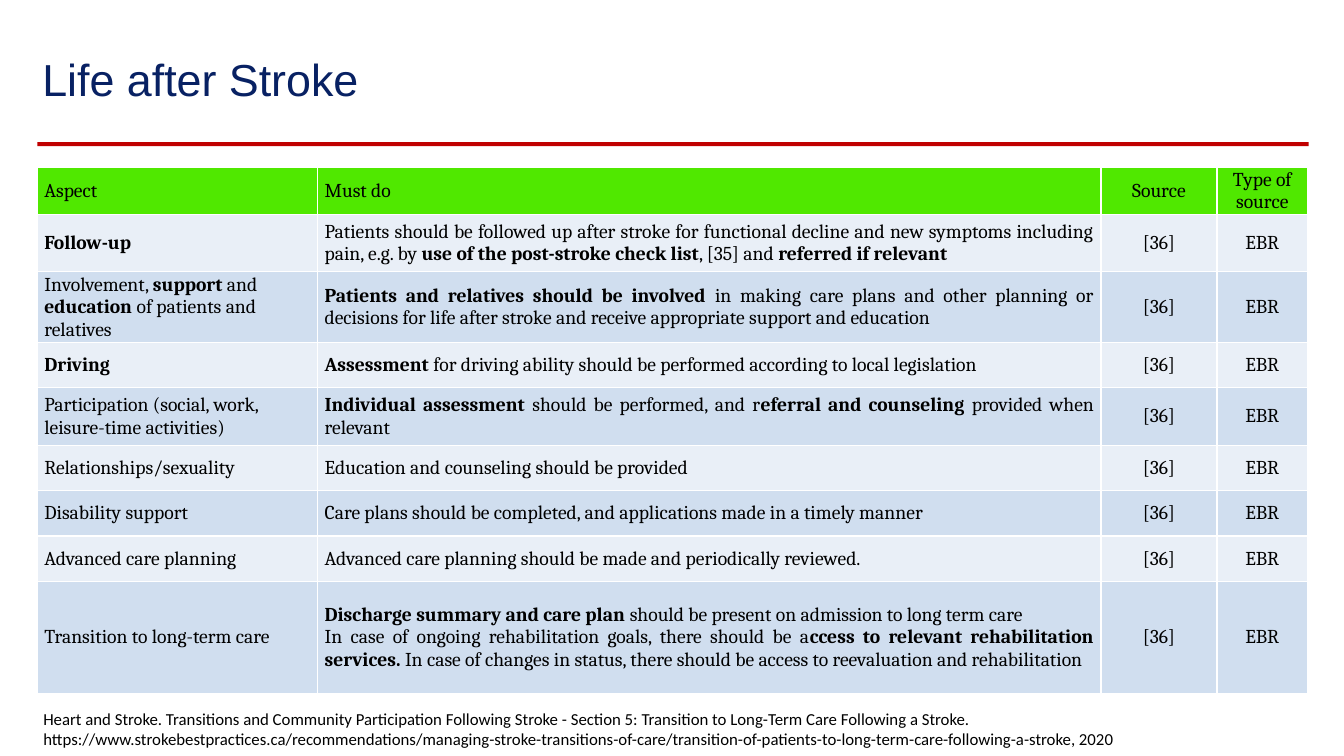
from dataclasses import dataclass

import lxml.etree
import pptx
import pptx.dml.color
import pptx.enum.shapes
import pptx.enum.text
import pptx.oxml.ns
import pptx.util

Inches = pptx.util.Inches
Align = pptx.enum.text.PP_ALIGN
Anchor = pptx.enum.text.MSO_ANCHOR

HEADER_FILL = "50E800"
BAND_FILLS = ("E9EFF7", "D0DEEF")
BLACK = "000000"
LEFT = 0.37


@dataclass
class TextBlock:
    text: str
    left: float
    top: float
    width: float
    height: float
    font: str
    size: int
    color: str
    anchor: Anchor = Anchor.TOP
    line_spacing: float = 1.0


@dataclass
class Column:
    width: float
    alignment: Align


@dataclass
class Aspect:
    """A table row; ** switches bold on and off."""
    name: str
    must_do: str
    height: float = 0.45
    source: str = "[36]"
    source_type: str = "EBR"


TITLE = TextBlock("Life after Stroke", LEFT, 0.4, 10.74, 0.82, "Arial", 32, "082163",
                  Anchor.MIDDLE, 0.9)
REFERENCE = TextBlock(
    "Heart and Stroke. Transitions and Community Participation Following Stroke - "
    "Section 5: Transition to Long-Term Care Following a Stroke. "
    "https://www.strokebestpractices.ca/recommendations/managing-stroke-transitions-of-care/"
    "transition-of-patients-to-long-term-care-following-a-stroke, 2020",
    0.38, 6.98, 12.6, 0.48, "Calibri", 12, BLACK)

COLUMNS = [
    Column(2.78, Align.LEFT),
    Column(7.77, Align.JUSTIFY),
    Column(1.15, Align.CENTER),
    Column(0.9, Align.CENTER),
]

ROWS = [
    Aspect("Aspect", "Must do", source="Source", source_type="Type of source"),
    Aspect("**Follow-up**",
           "Patients should be followed up after stroke for functional decline and new symptoms "
           "including pain, e.g. by **use of the post-stroke check list**, [35] and "
           "**referred if relevant**", 0.57),
    Aspect("Involvement, **support** and **education** of patients and relatives",
           "**Patients and relatives should be involved** in making care plans and other planning "
           "or decisions for life after stroke and receive appropriate support and education", 0.57),
    Aspect("**Driving**",
           "**Assessment** for driving ability should be performed according to local legislation"),
    Aspect("Participation (social, work, leisure-time activities)",
           "**Individual assessment** should be performed, and r**eferral and counseling **"
           "provided when relevant", 0.57),
    Aspect("Relationships/sexuality", "Education and counseling should be provided"),
    Aspect("Disability support",
           "Care plans should be completed, and applications made in a timely manner"),
    Aspect("Advanced care planning",
           "Advanced care planning should be made and periodically reviewed."),
    Aspect("Transition to long-term care",
           "**Discharge summary and care plan** should be present on admission to long term care\n"
           "In case of ongoing rehabilitation goals, there should be a**ccess to relevant "
           "rehabilitation services. **In case of changes in status, there should be access to "
           "reevaluation and rehabilitation", 1.11),
]


def rgb(color: str) -> pptx.dml.color.RGBColor:
    return pptx.dml.color.RGBColor.from_string(color)


def set_font(paragraph, name: str, size: int, color: str) -> None:
    paragraph.font.name = name
    paragraph.font.size = pptx.util.Pt(size)
    paragraph.font.color.rgb = rgb(color)


def add_text(slide, block: TextBlock) -> None:
    shape = slide.shapes.add_textbox(Inches(block.left), Inches(block.top),
                                     Inches(block.width), Inches(block.height))
    frame = shape.text_frame
    frame.word_wrap = True
    frame.vertical_anchor = block.anchor
    frame.margin_left = frame.margin_right = Inches(0.05)
    frame.margin_top = frame.margin_bottom = Inches(0.05)
    paragraph = frame.paragraphs[0]
    paragraph.text = block.text
    paragraph.line_spacing = block.line_spacing
    set_font(paragraph, block.font, block.size, block.color)


def add_rule(slide) -> None:
    shape = slide.shapes.add_shape(pptx.enum.shapes.MSO_SHAPE.RECTANGLE, Inches(LEFT),
                                   Inches(1.41), Inches(12.61), Inches(0.04))
    shape.shadow.inherit = False
    shape.fill.solid()
    shape.fill.fore_color.rgb = rgb("C00000")
    shape.line.fill.background()


def add_borders(cell, color: str, points: float) -> None:
    qn = pptx.oxml.ns.qn
    properties = cell._tc.get_or_add_tcPr()
    for side in ("a:lnL", "a:lnR", "a:lnT", "a:lnB"):
        line = lxml.etree.SubElement(properties, qn(side), w=str(pptx.util.Pt(points)))
        fill = lxml.etree.SubElement(line, qn("a:solidFill"))
        lxml.etree.SubElement(fill, qn("a:srgbClr"), val=color)


def fill_cell(cell, text: str, alignment: Align, color: str) -> None:
    add_borders(cell, "FFFFFF", 1)
    cell.fill.solid()
    cell.fill.fore_color.rgb = rgb(color)
    cell.vertical_anchor = Anchor.MIDDLE
    cell.margin_left = cell.margin_right = Inches(0.07)
    cell.margin_top = cell.margin_bottom = 0
    frame = cell.text_frame
    for index, line in enumerate(text.split("\n")):
        paragraph = frame.add_paragraph() if index else frame.paragraphs[0]
        paragraph.alignment = alignment
        set_font(paragraph, "Cambria", 14, BLACK)
        for part, piece in enumerate(line.split("**")):
            if piece:
                run = paragraph.add_run()
                run.text = piece
                run.font.bold = part % 2 == 1


def add_aspect_table(slide) -> None:
    width = sum(column.width for column in COLUMNS)
    height = sum(row.height for row in ROWS)
    table = slide.shapes.add_table(len(ROWS), len(COLUMNS), Inches(LEFT), Inches(1.66),
                                   Inches(width), Inches(height)).table
    table.first_row = table.horz_banding = False
    for index, column in enumerate(COLUMNS):
        table.columns[index].width = Inches(column.width)
    for index, row in enumerate(ROWS):
        table.rows[index].height = Inches(row.height)
        color = BAND_FILLS[(index - 1) % 2] if index else HEADER_FILL
        texts = (row.name, row.must_do, row.source, row.source_type)
        for cell, text, column in zip(table.rows[index].cells, texts, COLUMNS):
            fill_cell(cell, text, column.alignment, color)


def main() -> None:
    presentation = pptx.Presentation()
    presentation.slide_width = Inches(13.33)
    presentation.slide_height = Inches(7.5)
    slide = presentation.slides.add_slide(presentation.slide_layouts[6])

    # Heading
    add_rule(slide)
    add_text(slide, TITLE)

    # Reference and recommendations
    add_text(slide, REFERENCE)
    add_aspect_table(slide)

    presentation.save("out.pptx")


if __name__ == "__main__":
    main()
